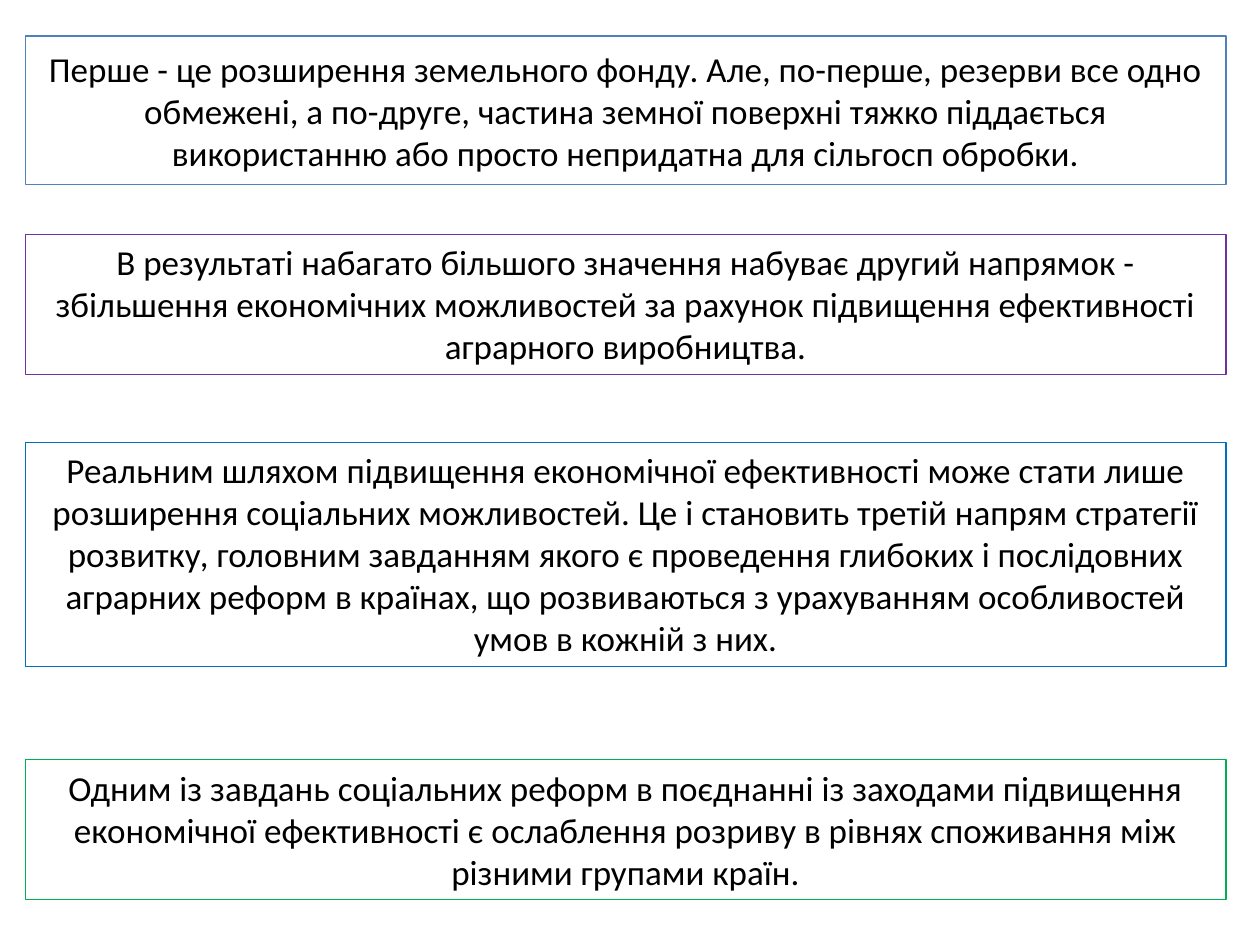
from dataclasses import dataclass

from pptx import Presentation
from pptx.dml.color import RGBColor
from pptx.enum.text import MSO_ANCHOR, MSO_AUTO_SIZE, PP_ALIGN
from pptx.slide import Slide
from pptx.util import Pt

CENTER = PP_ALIGN.CENTER
TOP, MIDDLE = MSO_ANCHOR.TOP, MSO_ANCHOR.MIDDLE
FIXED, GROW = MSO_AUTO_SIZE.NONE, MSO_AUTO_SIZE.SHAPE_TO_FIT_TEXT

COLORS = {
    "text": "000000",
    "land": "4F81BD",
    "efficiency": "7030A0",
    "reform": "0070C0",
    "equality": "00B050",
}

LAND = (
    "Перше - це розширення земельного фонду. Але, по-перше, резерви все одно "
    "обмежені, а по-друге, частина земної поверхні тяжко піддається "
    "використанню або просто непридатна для сільгосп обробки."
)
EFFICIENCY = (
    "В результаті набагато більшого значення набуває другий напрямок - "
    "збільшення економічних можливостей за рахунок підвищення ефективності "
    "аграрного виробництва."
)
REFORM = (
    "Реальним шляхом підвищення економічної ефективності може стати лише "
    "розширення соціальних можливостей. Це і становить третій напрям стратегії "
    "розвитку, головним завданням якого є проведення глибоких і послідовних "
    "аграрних реформ в країнах, що розвиваються з урахуванням особливостей "
    "умов в кожній з них."
)
EQUALITY = (
    "Одним із завдань соціальних реформ в поєднанні із заходами підвищення "
    "економічної ефективності є ослаблення розриву в рівнях споживання між "
    "різними групами країн."
)


def write_text(frame, text, *, font, size, color, align=CENTER, anchor=TOP, fit=GROW):
    frame.word_wrap = True
    frame.auto_size = fit
    frame.vertical_anchor = anchor
    para = frame.paragraphs[0]
    para.alignment = align
    span = para.add_run()
    span.text = text
    span.font.name = font
    span.font.size = Pt(size)
    span.font.color.rgb = RGBColor.from_string(COLORS[color])


@dataclass
class Painter:
    """Draws outlined statements on the current slide in one style."""

    page: Slide
    font: str = "Calibri"
    size: float = 20
    left: float = 14.4
    width: float = 686.2
    border: float = 0.75

    def statement(self, text, top, height, color, **text_format):
        box = self.page.shapes.add_textbox(
            Pt(self.left), Pt(top), Pt(self.width), Pt(height)
        )
        box.line.color.rgb = RGBColor.from_string(COLORS[color])
        box.line.width = Pt(self.border)
        write_text(
            box.text_frame, text, font=self.font, size=self.size,
            color="text", **text_format,
        )


def main():
    deck = Presentation()
    deck.slide_width, deck.slide_height = Pt(720), Pt(540)
    painter = Painter(deck.slides.add_slide(deck.slide_layouts[6]))
    painter.statement(LAND, 20.6, 85, "land", anchor=MIDDLE, fit=FIXED)
    painter.statement(EFFICIENCY, 133.9, 80, "efficiency")
    painter.statement(REFORM, 252.7, 128.2, "reform")
    painter.statement(EQUALITY, 434.2, 80, "equality")
    deck.save("out.pptx")


if __name__ == "__main__":
    main()
